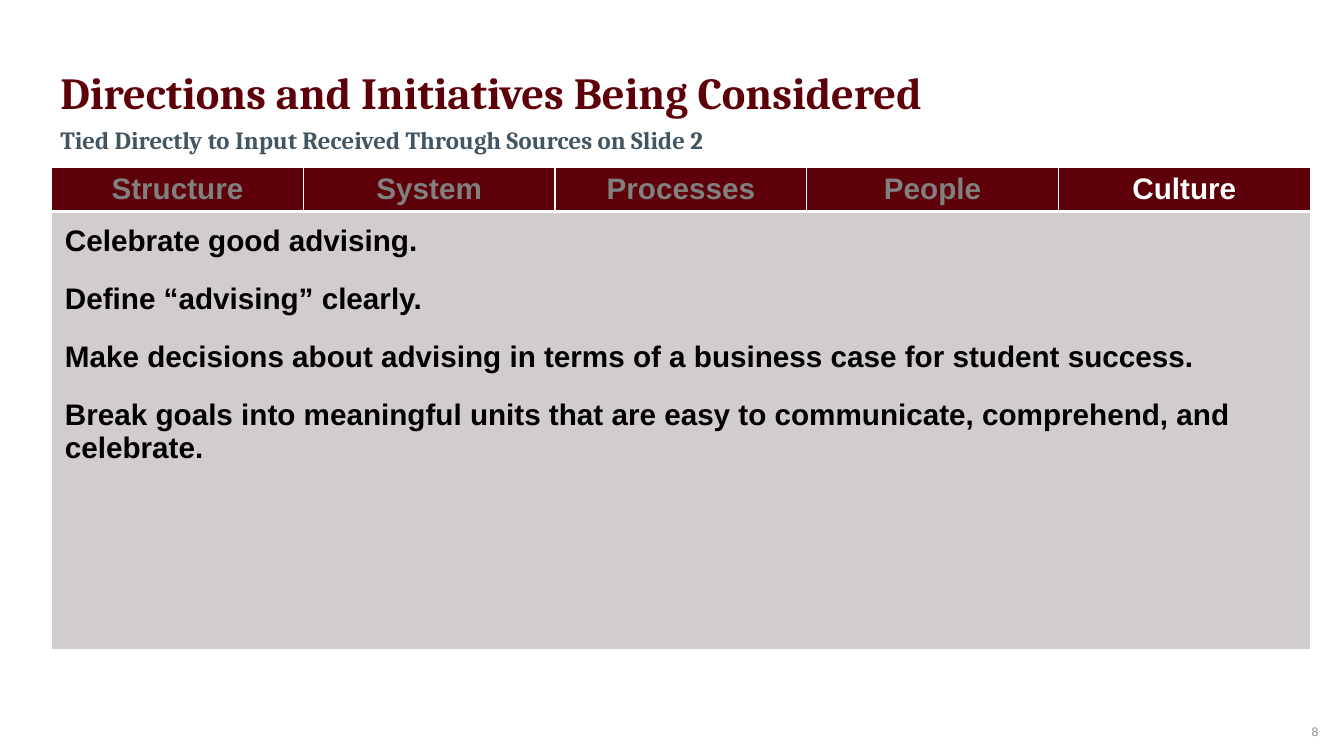
from dataclasses import dataclass

import pptx
import pptx.dml.color
import pptx.enum.text
import pptx.oxml
import pptx.oxml.ns
import pptx.util

Inches = pptx.util.Inches
ALIGN = pptx.enum.text.PP_ALIGN
ANCHOR = pptx.enum.text.MSO_ANCHOR

MAROON = "5E0009"
WHITE = "FFFFFF"
GREY = "808080"
COLUMN_WIDTH = 2.83
HEADER_HEIGHT = 0.49
BODY_HEIGHT = 4.92
TOPICS = ["Structure", "System", "Processes", "People", "Culture"]
CURRENT_TOPIC = "Culture"
INITIATIVES = [
    "Celebrate good advising.",
    "Define “advising” clearly.",
    "Make decisions about advising in terms of a business case for student success.",
    "Break goals into meaningful units that are easy to communicate, comprehend, and celebrate.",
]


@dataclass
class Label:
    text: str
    left: float
    top: float
    width: float
    height: float
    font: str
    size: int
    color: str
    bold: bool = True
    align: ALIGN = ALIGN.LEFT
    anchor: ANCHOR = ANCHOR.TOP
    wrap: bool = True


LABELS = [
    Label("8", 14.44, 8.09, 0.48, 0.28, "Arial", 10, "8C8C8C",
          bold=False, align=ALIGN.RIGHT, anchor=ANCHOR.MIDDLE),
    Label("Directions and Initiatives Being Considered",
          0.58, 0.68, 11.54, 0.71, "Cambria", 36, MAROON, wrap=False),
    Label("Tied Directly to Input Received Through Sources on Slide 2",
          0.58, 1.35, 13.86, 0.44, "Cambria", 20, "425563"),
]


def rgb(color: str) -> pptx.dml.color.RGBColor:
    return pptx.dml.color.RGBColor.from_string(color)


def write(tf, paragraphs: list[str], *, font: str = "Arial", size: int = 24,
          color: str = "000000", bold: bool = True, align: ALIGN = ALIGN.LEFT,
          space_after: int = 0) -> None:
    for i, text in enumerate(paragraphs):
        p = tf.add_paragraph() if i else tf.paragraphs[0]
        p.alignment = align
        p.space_after = pptx.util.Pt(space_after)
        r = p.add_run()
        r.text = text
        r.font.name = font
        r.font.size = pptx.util.Pt(size)
        r.font.bold = bold
        r.font.color.rgb = rgb(color)


def add_label(s, label: Label) -> None:
    sp = s.shapes.add_textbox(Inches(label.left), Inches(label.top),
                              Inches(label.width), Inches(label.height))
    tf = sp.text_frame
    tf.word_wrap = label.wrap
    tf.vertical_anchor = label.anchor
    write(tf, [label.text], font=label.font, size=label.size, color=label.color,
          bold=label.bold, align=label.align)


def style_cell(cell, fill: str, *, top: int = 1, bottom: int = 1) -> None:
    tc_pr = cell._tc.get_or_add_tcPr()
    for side, width in {"L": 1, "R": 1, "T": top, "B": bottom}.items():
        tc_pr.append(pptx.oxml.parse_xml(
            f'<a:ln{side} {pptx.oxml.ns.nsdecls("a")} w="{pptx.util.Pt(width)}">'
            f'<a:solidFill><a:srgbClr val="{WHITE}"/></a:solidFill></a:ln{side}>'))
    cell.fill.solid()
    cell.fill.fore_color.rgb = rgb(fill)


def add_initiatives_table(s) -> None:
    n = len(TOPICS)
    table = s.shapes.add_table(2, n, Inches(0.58), Inches(1.88), Inches(n * COLUMN_WIDTH),
                               Inches(HEADER_HEIGHT + BODY_HEIGHT)).table
    table.rows[0].height = Inches(HEADER_HEIGHT)
    table.rows[1].height = Inches(BODY_HEIGHT)
    for i, topic in enumerate(TOPICS):
        table.columns[i].width = Inches(COLUMN_WIDTH)
        header = table.cell(0, i)
        header.vertical_anchor = ANCHOR.MIDDLE
        style_cell(header, MAROON, bottom=3)
        write(header.text_frame, [topic], align=ALIGN.CENTER,
              color=WHITE if topic == CURRENT_TOPIC else GREY)
        style_cell(table.cell(1, i), "D2CCCC", top=3)
    body = table.cell(1, 0)
    body.merge(table.cell(1, n - 1))
    body.margin_left = body.margin_right = Inches(0.15)
    body.margin_top = body.margin_bottom = Inches(0.15)
    write(body.text_frame, INITIATIVES, space_after=20)


def main() -> None:
    prs = pptx.Presentation()
    prs.slide_width = Inches(15.11)
    prs.slide_height = Inches(8.5)
    s = prs.slides.add_slide(prs.slide_layouts[6])
    for label in LABELS:
        add_label(s, label)
    add_initiatives_table(s)
    prs.save("out.pptx")


if __name__ == "__main__":
    main()
